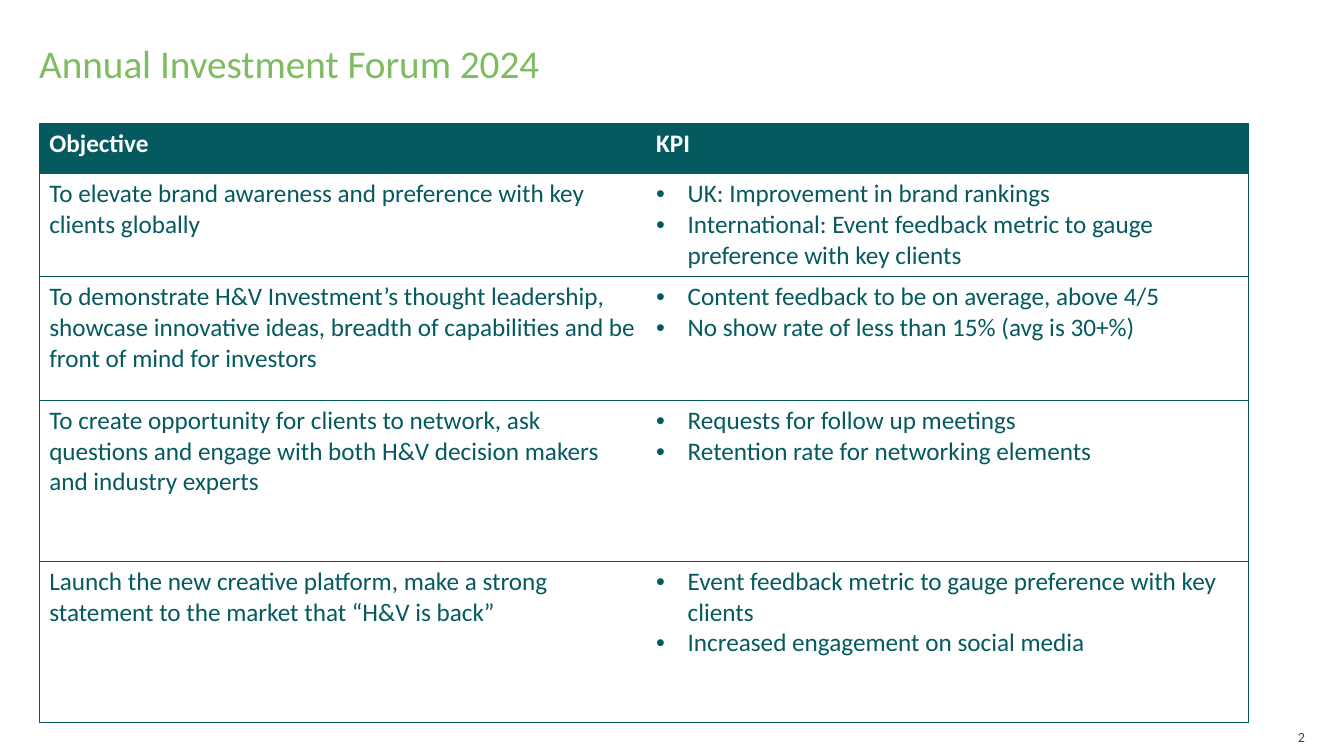
from pptx import Presentation
from pptx.dml.color import RGBColor
from pptx.enum.text import MSO_ANCHOR, PP_ALIGN
from pptx.oxml.ns import qn
from pptx.util import Pt
from lxml import etree

TOP, MIDDLE = MSO_ANCHOR.TOP, MSO_ANCHOR.MIDDLE
LEFT, RIGHT = PP_ALIGN.LEFT, PP_ALIGN.RIGHT

FONT = "Calibri"
TEAL, GREEN, WHITE = "055A60", "7EBD5F", "FFFFFF"
BULLET_INDENT = 22.5
BORDER_WIDTH = 0.5

COLUMN_WIDTHS = [433.5, 430.5]
ROW_HEIGHTS = [36, 73.5, 88.5, 115, 115]
HEADINGS = ["Objective", "KPI"]
OBJECTIVES = [
    ("To elevate brand awareness and preference with key clients globally",
     ["UK: Improvement in brand rankings",
      "International: Event feedback metric to gauge preference with key clients"]),
    ("To demonstrate H&V Investment’s thought leadership, showcase innovative "
     "ideas, breadth of capabilities and be front of mind for investors",
     ["Content feedback to be on average, above 4/5",
      "No show rate of less than 15% (avg is 30+%)"]),
    ("To create opportunity for clients to network, ask questions and engage "
     "with both H&V decision makers and industry experts",
     ["Requests for follow up meetings",
      "Retention rate for networking elements"]),
    ("Launch the new creative platform, make a strong statement to the market "
     "that “H&V is back”",
     ["Event feedback metric to gauge preference with key clients",
      "Increased engagement on social media"]),
]


def color(value):
    return RGBColor.from_string(value)


def apply(target, values):
    for name, value in values.items():
        setattr(target, name, value)


def style_font(paragraph, size, font_color, bold=False):
    apply(paragraph.font, {"name": FONT, "size": Pt(size), "bold": bold})
    paragraph.font.color.rgb = color(font_color)


def add_text(slide, box, text, size, font_color, frame_format, paragraph_format):
    shape = slide.shapes.add_textbox(*map(Pt, box))
    frame = shape.text_frame
    apply(frame, {"word_wrap": True, "margin_right": 0, **frame_format})
    paragraph = frame.paragraphs[0]
    paragraph.text = text
    apply(paragraph, paragraph_format)
    style_font(paragraph, size, font_color)


def add_bullet(paragraph):
    properties = paragraph._p.get_or_add_pPr()
    properties.set("marL", str(Pt(BULLET_INDENT)))
    properties.set("indent", str(-Pt(BULLET_INDENT)))
    etree.SubElement(properties, qn("a:buFont"), typeface="Arial")
    etree.SubElement(properties, qn("a:buChar"), char="•")


def set_borders(cell, visible_sides):
    properties = cell._tc.get_or_add_tcPr()
    for side in "LRTB":
        line = etree.SubElement(properties, qn(f"a:ln{side}"), w=str(Pt(BORDER_WIDTH)))
        if side in visible_sides:
            fill = etree.SubElement(line, qn("a:solidFill"))
            etree.SubElement(fill, qn("a:srgbClr"), val=TEAL)
        else:
            etree.SubElement(line, qn("a:noFill"))


def fill_cell(cell, lines, fill_color, font_color, sides, bold=False, bullets=False):
    set_borders(cell, sides)
    cell.fill.solid()
    cell.fill.fore_color.rgb = color(fill_color)
    cell.text = "\n".join(lines)
    for paragraph in cell.text_frame.paragraphs:
        if bullets:
            add_bullet(paragraph)
        style_font(paragraph, 18, font_color, bold)


def add_objectives_table(slide, left, top):
    frame = slide.shapes.add_table(
        len(ROW_HEIGHTS), len(COLUMN_WIDTHS), Pt(left), Pt(top),
        Pt(sum(COLUMN_WIDTHS)), Pt(sum(ROW_HEIGHTS)))
    table = frame.table
    table.horz_banding = False
    for column, width in zip(table.columns, COLUMN_WIDTHS):
        column.width = Pt(width)
    for row, height in zip(table.rows, ROW_HEIGHTS):
        row.height = Pt(height)

    # Only the outer frame and the row rules are drawn
    sides = ["LTB", "RTB"]
    for index, heading in enumerate(HEADINGS):
        fill_cell(table.cell(0, index), [heading], TEAL, WHITE, sides[index], bold=True)
    for row, (objective, indicators) in enumerate(OBJECTIVES, start=1):
        fill_cell(table.cell(row, 0), [objective], WHITE, TEAL, sides[0])
        fill_cell(table.cell(row, 1), indicators, WHITE, TEAL, sides[1], bullets=True)


def main():
    presentation = Presentation()
    presentation.slide_width, presentation.slide_height = Pt(960), Pt(540)
    slide = presentation.slides.add_slide(presentation.slide_layouts[6])

    # Title
    add_text(slide, (28, 28, 904, 40), "Annual Investment Forum 2024", 28, GREEN,
             {"margin_left": 0, "vertical_anchor": TOP},
             {"alignment": LEFT, "line_spacing": 0.9})

    # Objectives and their indicators
    add_objectives_table(slide, 28, 88)

    # Slide number
    add_text(slide, (795, 512.5, 137, 27.5), "2", 10, TEAL,
             {"vertical_anchor": MIDDLE}, {"alignment": RIGHT})

    presentation.save("out.pptx")


if __name__ == "__main__":
    main()
